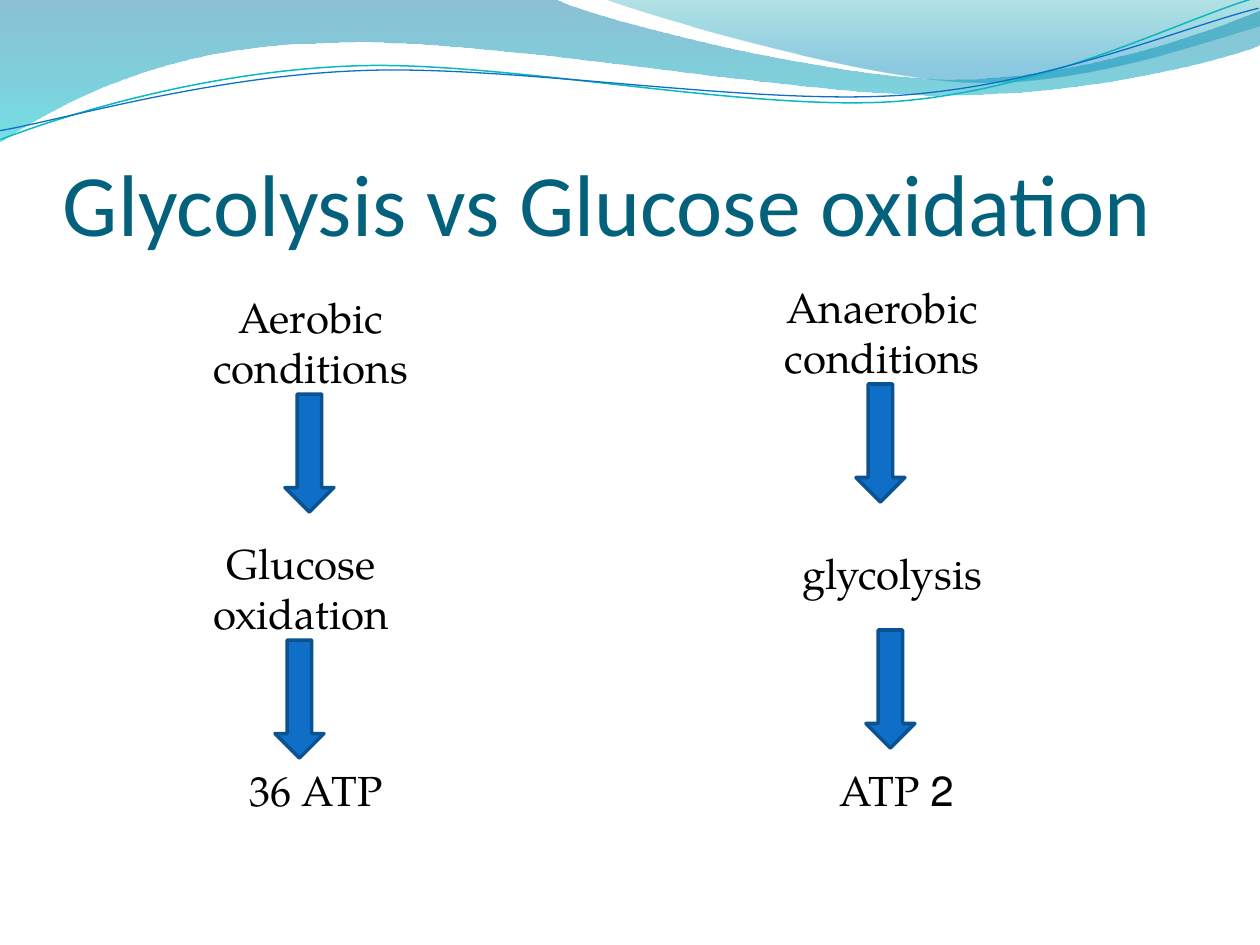
"""Build the slide comparing glycolysis with glucose oxidation."""
from typing import NamedTuple, Optional

import lxml.etree
import pptx
import pptx.dml.color
import pptx.enum.shapes
import pptx.enum.text
import pptx.oxml.ns
import pptx.util

PX = pptx.util.Inches(1) / 126
RGB = pptx.dml.color.RGBColor
qn = pptx.oxml.ns.qn
BLACK = RGB(0x00, 0x00, 0x00)
TITLE_TEAL = RGB(0x04, 0x61, 0x7B)
ARROW_BLUE = RGB(0x0F, 0x6F, 0xC6)
ARROW_EDGE = RGB(0x0B, 0x52, 0x92)
STRAND_TEAL = RGB(0x0A, 0xB8, 0xBF)
WAVE_BLUE = RGB(0x00, 0x74, 0xA1)
WAVE_CYAN = RGB(0x00, 0xC6, 0xCF)
CREST_TEAL = RGB(0x00, 0xA1, 0xA9)
CREST_BLUE = RGB(0x00, 0x8B, 0xBF)
BODY_FONT = "TeX Gyre Pagella"
ARROW_WIDTH, ARROW_HEIGHT = 49, 118
STRAND_TILT = 357.3

Point = tuple[int, int]


class Stop(NamedTuple):
    position: float
    color: RGB
    opacity: int


class Wave(NamedTuple):
    start: Point
    segments: list[tuple[Point, ...]]
    stops: tuple[Stop, Stop]


class Strand(NamedTuple):
    start: Point
    segments: list[tuple[Point, ...]]
    color: RGB
    weight: float


class Step(NamedTuple):
    text: str
    left: int
    top: int
    width: int
    height: int
    rtl: bool
    arrow_at: Optional[Point] = None


WAVES = [
    Wave((0, 0), [((554, -1),),
                  ((600, 21), (837, 79), (955, 79)),
                  ((1075, 79), (1207, 33), (1260, 11)),
                  ((1261, 45),),
                  ((1239, 55), (1096, 96), (940, 95)),
                  ((784, 95), (481, 35), (324, 43)),
                  ((163, 45), (58, 105), (-1, 142))],
         (Stop(0, WAVE_BLUE, 45), Stop(1, WAVE_CYAN, 55))),
    Wave((604, -1), [((641, 14), (859, 78), (969, 82)),
                     ((1079, 87), (1211, 40), (1260, 26)),
                     ((1260, 0),)],
         (Stop(0, CREST_TEAL, 30), Stop(0.8, CREST_BLUE, 45))),
]
STRANDS = [
    Strand((-2, 110), [((58, 90), (199, 52), (350, 53)),
                       ((499, 53), (745, 118), (896, 114)),
                       ((1049, 109), (1184, 45), (1260, 27))], STRAND_TEAL, 0.85),
    Strand((-2, 101), [((57, 94), (207, 57), (357, 58)),
                       ((509, 58), (750, 112), (902, 108)),
                       ((1052, 104), (1188, 52), (1261, 38))], ARROW_BLUE, 0.75),
]
STEPS = [
    Step("Aerobic conditions", 167, 285, 287, 115, False, (285, 394)),
    Step("Glucose oxidation", 167, 531, 268, 115, True, (275, 640)),
    Step("36 ATP", 187, 758, 258, 63, False),
    Step("Anaerobic conditions", 718, 275, 328, 115, True, (856, 384)),
    Step("glycolysis", 718, 541, 348, 63, True, (866, 630)),
    Step("2 ATP", 758, 758, 277, 63, True),
]


def emu(pixels: float) -> int:
    """Turn pixels into EMU."""
    return round(pixels * PX)


def add_outline(shapes, start: Point, segments: list[tuple[Point, ...]], close: bool):
    """Add a freeform whose three-point segments are cubic curves."""
    builder = shapes.build_freeform(emu(start[0]), emu(start[1]))
    ends = [segment[-1] for segment in segments]
    builder.add_line_segments([(emu(x), emu(y)) for x, y in ends], close=close)
    outline = builder.convert_to_shape()
    outline.shadow.inherit = False
    sides = list(outline._element.iter(qn("a:lnTo")))
    for side, segment in zip(sides, segments):
        if len(segment) == 3:
            curve = lxml.etree.Element(qn("a:cubicBezTo"))
            for x, y in segment:
                point = lxml.etree.SubElement(curve, qn("a:pt"))
                point.set("x", str(emu(x) - outline.left))
                point.set("y", str(emu(y) - outline.top))
            side.getparent().replace(side, curve)
    return outline


def add_wave(shapes, wave: Wave) -> None:
    """Add a translucent wave that fades from top to bottom."""
    band = add_outline(shapes, wave.start, wave.segments, True)
    band.line.fill.background()
    band.fill.gradient()
    band.fill.gradient_angle = 270
    for target, stop in zip(band.fill.gradient_stops, wave.stops):
        target.position = stop.position
        target.color.rgb = stop.color
    colors = band._element.spPr.iter(qn("a:srgbClr"))
    for color, stop in zip(list(colors), wave.stops):
        lxml.etree.SubElement(color, qn("a:alpha")).set("val", str(stop.opacity * 1000))


def add_strand(shapes, strand: Strand) -> None:
    """Add a thin, slightly tilted curve."""
    curve = add_outline(shapes, strand.start, strand.segments, False)
    curve.rotation = STRAND_TILT
    curve.fill.background()
    curve.line.color.rgb = strand.color
    curve.line.width = pptx.util.Pt(strand.weight)


def add_text(shapes, text: str, box: tuple[int, int, int, int], font: str,
             size: int, color: RGB):
    """Add a wrapped text box holding one run and return its frame."""
    frame = shapes.add_textbox(*map(emu, box)).text_frame
    frame.word_wrap = True
    run = frame.paragraphs[0].add_run()
    run.text = text
    run.font.name = font
    run.font.size = pptx.util.Pt(size)
    run.font.color.rgb = color
    return frame


def add_title(shapes, text: str) -> None:
    """Add the slide title, set on the bottom of its box."""
    frame = add_text(shapes, text, (63, 96, 1134, 158), "Calibri", 50, TITLE_TEAL)
    frame.vertical_anchor = pptx.enum.text.MSO_ANCHOR.BOTTOM
    frame.margin_left = frame.margin_right = frame.margin_bottom = 0


def add_step(shapes, step: Step) -> None:
    """Add the centred text of a step."""
    frame = add_text(shapes, step.text, (step.left, step.top, step.width, step.height),
                     BODY_FONT, 24, BLACK)
    frame.auto_size = pptx.enum.text.MSO_AUTO_SIZE.SHAPE_TO_FIT_TEXT
    paragraph = frame.paragraphs[0]
    paragraph.alignment = pptx.enum.text.PP_ALIGN.CENTER
    if step.rtl:
        paragraph._p.get_or_add_pPr().set("rtl", "1")


def add_arrow(shapes, corner: Point) -> None:
    """Add a block arrow that leads down to the next step."""
    arrow = shapes.add_shape(pptx.enum.shapes.MSO_SHAPE.DOWN_ARROW,
                             *map(emu, (*corner, ARROW_WIDTH, ARROW_HEIGHT)))
    arrow.shadow.inherit = False
    arrow.fill.solid()
    arrow.fill.fore_color.rgb = ARROW_BLUE
    arrow.line.color.rgb = ARROW_EDGE
    arrow.line.width = pptx.util.Pt(2)


def main() -> None:
    """Build and save the slide."""
    deck = pptx.Presentation()
    deck.slide_width, deck.slide_height = emu(1260), emu(945)
    shapes = deck.slides.add_slide(deck.slide_layouts[6]).shapes
    for wave in WAVES:
        add_wave(shapes, wave)
    for strand in STRANDS:
        add_strand(shapes, strand)
    add_title(shapes, "Glycolysis vs Glucose oxidation")
    for step in STEPS:
        add_step(shapes, step)
    for step in STEPS:
        if step.arrow_at:
            add_arrow(shapes, step.arrow_at)
    deck.save("out.pptx")


if __name__ == "__main__":
    main()
